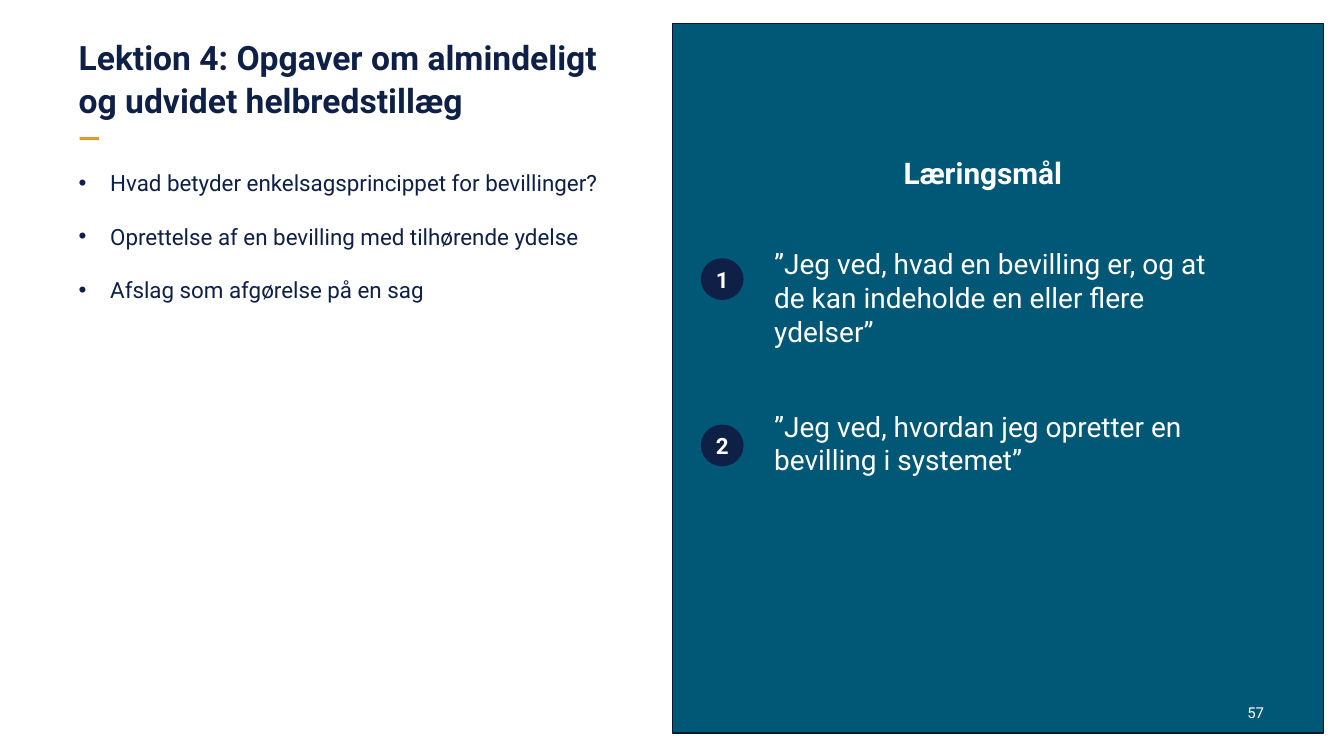
from dataclasses import dataclass

from pptx import Presentation
from pptx.dml.color import RGBColor
from pptx.enum.shapes import MSO_SHAPE
from pptx.enum.text import MSO_ANCHOR, MSO_AUTO_SIZE, PP_ALIGN
from pptx.util import Pt

LEFT, CENTER, RIGHT = PP_ALIGN.LEFT, PP_ALIGN.CENTER, PP_ALIGN.RIGHT
TOP, MIDDLE, BOTTOM = MSO_ANCHOR.TOP, MSO_ANCHOR.MIDDLE, MSO_ANCHOR.BOTTOM
RECT, CIRCLE = MSO_SHAPE.RECTANGLE, MSO_SHAPE.FLOWCHART_CONNECTOR


@dataclass(frozen=True)
class Theme:
    font: str = "Roboto"
    navy: RGBColor = RGBColor(0x0F, 0x20, 0x47)
    badge: RGBColor = RGBColor(0x0E, 0x20, 0x46)
    teal: RGBColor = RGBColor(0x00, 0x57, 0x76)
    border: RGBColor = RGBColor(0x0A, 0x18, 0x34)
    gold: RGBColor = RGBColor(0xDE, 0x9C, 0x2B)
    white: RGBColor = RGBColor(0xFF, 0xFF, 0xFF)
    title: float = 24
    heading: float = 21.3
    quote: float = 20
    body: float = 16
    number: float = 10.7


theme = Theme()


def add_block(kind, x, y, w, h, fill, line=None):
    sp = slide.shapes.add_shape(kind, Pt(x), Pt(y), Pt(w), Pt(h))
    sp.shadow.inherit = False
    sp.fill.solid()
    sp.fill.fore_color.rgb = fill
    if line is None:
        sp.line.fill.background()
    else:
        sp.line.color.rgb = line
        sp.line.width = Pt(1)
    return sp


def write(sp, lines, size, color, bold=False, align=LEFT, anchor=TOP):
    tf = sp.text_frame
    tf.word_wrap = True
    tf.auto_size = MSO_AUTO_SIZE.NONE
    tf.vertical_anchor = anchor
    tf.margin_left = tf.margin_top = tf.margin_right = tf.margin_bottom = 0
    for i, text in enumerate(lines):
        p = tf.add_paragraph() if i else tf.paragraphs[0]
        p.alignment = align
        p.space_before = Pt(0)
        r = p.add_run()
        r.text = text
        r.font.name = theme.font
        r.font.size = Pt(size)
        r.font.bold = bold
        r.font.color.rgb = color
    return tf


prs = Presentation()
prs.slide_width, prs.slide_height = Pt(960), Pt(540)
slide = prs.slides.add_slide(prs.slide_layouts[1])

# Title with accent dash
title = slide.shapes.title
title.left, title.top, title.width, title.height = Pt(56.2), Pt(54.7), Pt(402.5), Pt(31)
tf = write(title, ["Lektion 4: Opgaver om almindeligt og udvidet helbredstillæg"],
           theme.title, theme.navy, bold=True, anchor=BOTTOM)
tf.paragraphs[0].line_spacing = Pt(30.7)
add_block(RECT, 56.9, 97.9, 13.7, 2.2, theme.gold)

# Topic list
topics = slide.placeholders[1]
topics.left, topics.top, topics.width, topics.height = Pt(56.2), Pt(121), Pt(391.7), Pt(367.2)
tf = write(topics, [
    "Hvad betyder enkelsagsprincippet for bevillinger?",
    "Oprettelse af en bevilling med tilhørende ydelse",
    "Afslag som afgørelse på en sag",
], theme.body, theme.navy)
for i, p in enumerate(tf.paragraphs):
    p.space_before = Pt(19 if i else 0)
    pPr = p._p.get_or_add_pPr()
    pPr.set("marL", str(Pt(22.5)))
    pPr.set("indent", str(Pt(-22.5)))

# Panel with learning goals
add_block(RECT, 480.2, 16.6, 465.1, 506.9, theme.teal, theme.border)
heading = slide.shapes.add_textbox(Pt(501.1), Pt(110.2), Pt(401.8), Pt(30))
write(heading, ["Læringsmål"], theme.heading, theme.white, bold=True, align=CENTER)

goals = [
    "”Jeg ved, hvad en bevilling er, og at de kan indeholde en eller flere ydelser”",
    "”Jeg ved, hvordan jeg opretter en bevilling i systemet”",
]
for i, goal in enumerate(goals):
    badge = add_block(CIRCLE, 501.1, 185 + i * 118.8, 29.5, 28.8, theme.badge, theme.badge)
    write(badge, [str(i + 1)], theme.body, theme.white, bold=True, align=CENTER, anchor=MIDDLE)
    quote = slide.shapes.add_textbox(Pt(553), Pt(176.4 + i * 115.9), Pt(324), Pt(85.7))
    write(quote, [goal], theme.quote, theme.white)

# Slide number
number = slide.shapes.add_textbox(Pt(846.7), Pt(502.6), Pt(56.2), Pt(20.9))
write(number, ["57"], theme.number, theme.white, align=RIGHT)

prs.save("out.pptx")
